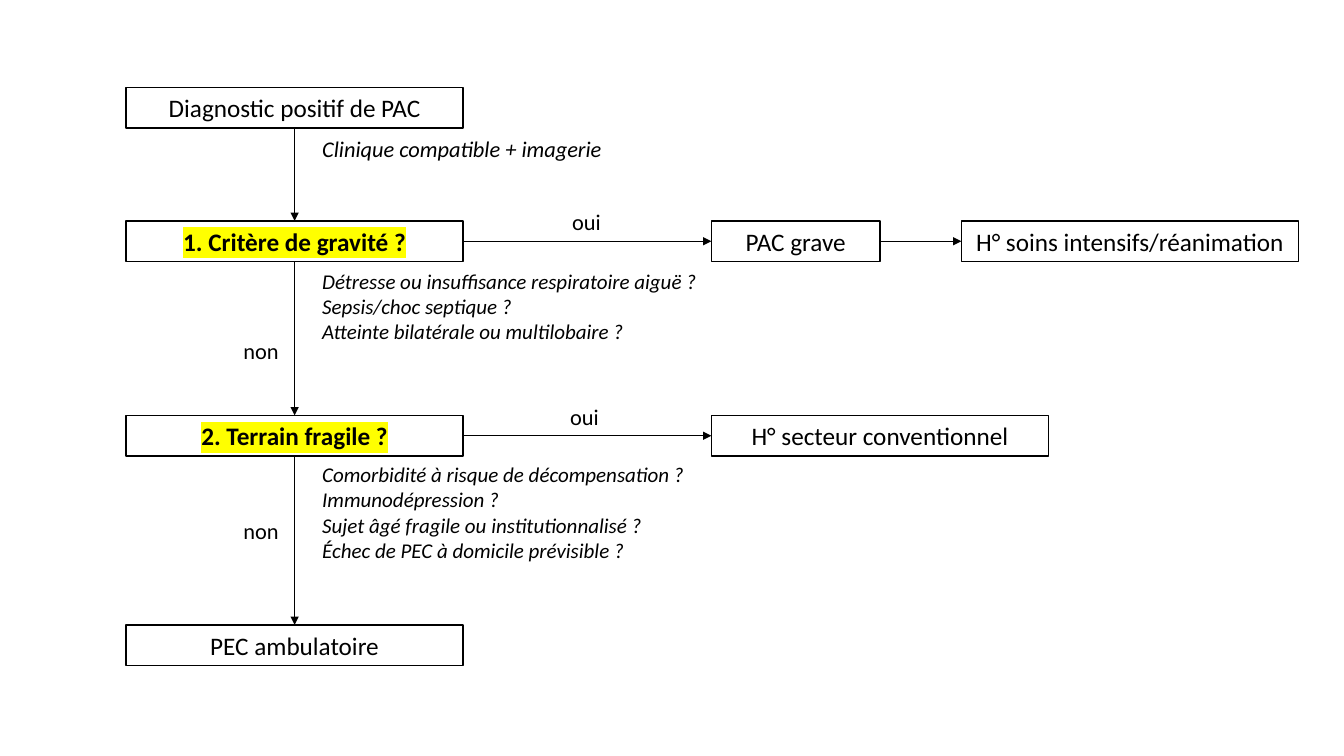
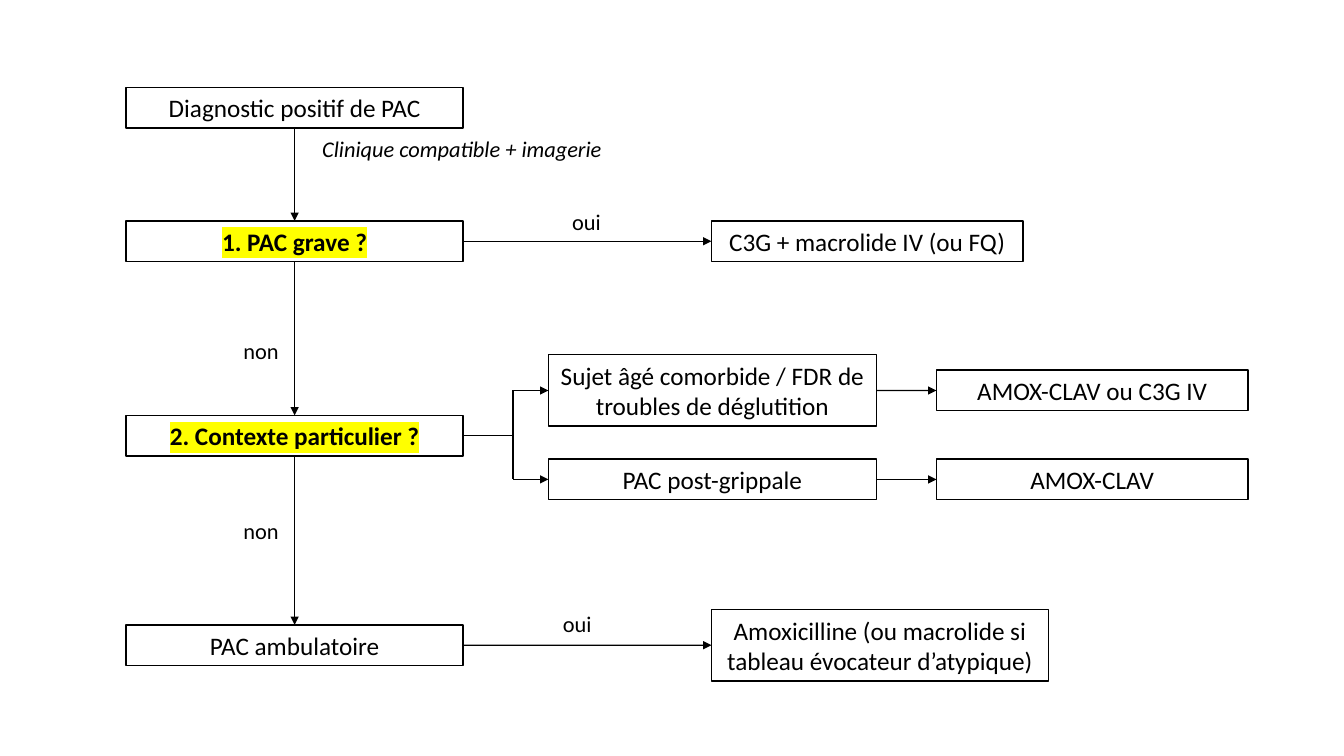
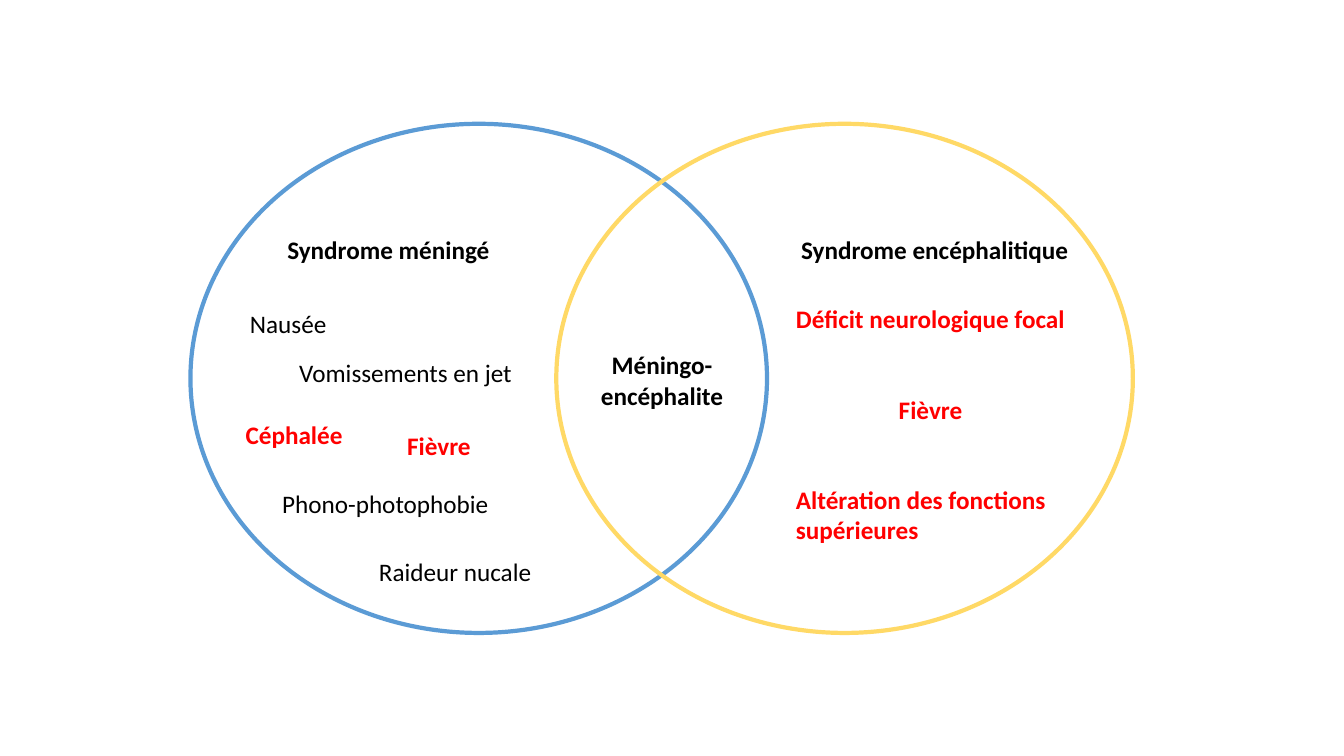
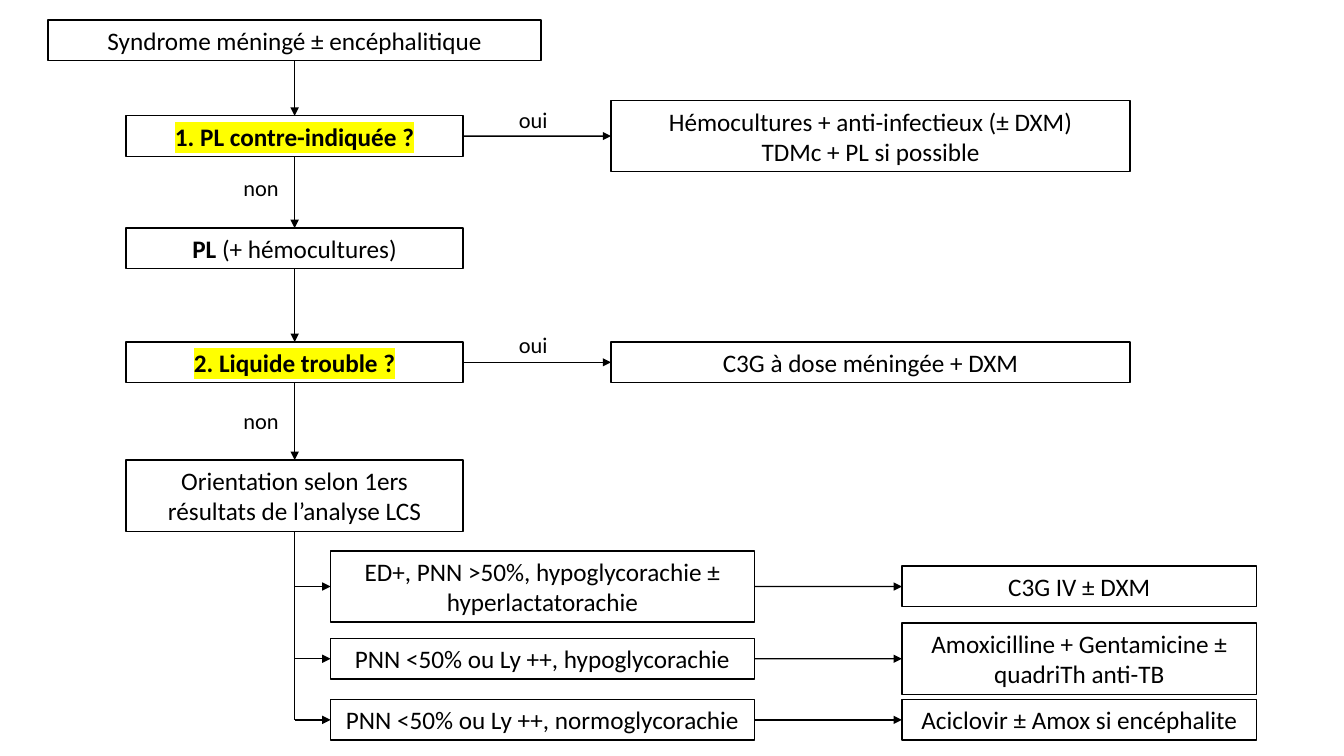
import dataclasses

import pptx
import pptx.dml.color
import pptx.enum.dml
import pptx.enum.shapes
import pptx.enum.text
import pptx.oxml
import pptx.oxml.ns
import pptx.util

Cm = pptx.util.Cm
Pt = pptx.util.Pt
Shape = pptx.enum.shapes.MSO_SHAPE
Align = pptx.enum.text.PP_ALIGN
Anchor = pptx.enum.text.MSO_ANCHOR
TOP, LEFT, BOTTOM, RIGHT = range(4)  # connection sites of a rectangle


def color(code):
    return pptx.dml.color.RGBColor.from_string(code)


@dataclasses.dataclass(frozen=True)
class Theme:
    font: str = "Calibri"
    ink: str = "000000"
    alert: str = "FF0000"
    mark: str = "FFFF00"
    blue: str = "5B9BD5"
    gold: str = "FFD966"
    body: int = 18
    label: int = 16
    note: int = 15
    thin: int = 1
    thick: int = 3


class Deck:
    """Holds the theme and the current slide."""

    def __init__(self, theme):
        self.theme = theme
        self.prs = pptx.Presentation()
        self.prs.slide_width, self.prs.slide_height = Cm(33.87), Cm(19.05)
        self.slide = None

    def page(self):
        self.slide = self.prs.slides.add_slide(self.prs.slide_layouts[6])

    # Text
    def tall(self, rows, size):
        return 0.25 + 0.043 * size * rows

    def run(self, para, text, size, tint=None, mark=False, **style):
        run = para.add_run()
        run.text = text
        run.font.color.rgb = color(tint or self.theme.ink)
        if mark:
            fill = run.font._element.find(pptx.oxml.ns.qn("a:solidFill"))
            fill.addnext(self.tag("highlight", f'<a:srgbClr val="{self.theme.mark}"/>'))
        values = {"name": self.theme.font, "size": Pt(size), **style}
        for key, value in values.items():
            setattr(run.font, key, value)

    def letter(self, shape, text, size, align, anchor, lead=None, **style):
        frame = shape.text_frame
        values = {"word_wrap": True, "vertical_anchor": anchor,
                  "auto_size": pptx.enum.text.MSO_AUTO_SIZE.SHAPE_TO_FIT_TEXT}
        for key, value in values.items():
            setattr(frame, key, value)
        for num, line in enumerate(text.split("\n")):
            para = frame.add_paragraph() if num else frame.paragraphs[0]
            para.alignment = align
            if lead:
                self.run(para, lead, size, bold=True)
            self.run(para, line, size, **style)

    def text(self, left, top, width, text, size=None, rows=1, align=Align.LEFT, **style):
        size = size or self.theme.body
        high = self.tall(rows, size)
        shape = self.slide.shapes.add_textbox(Cm(left), Cm(top), Cm(width), Cm(high))
        self.letter(shape, text, size, align, Anchor.TOP, **style)

    def label(self, mid, level, text):
        size = self.theme.label
        top = level - self.tall(1, size) / 2
        self.text(mid - 1.7, top, 3.4, text, size, align=Align.CENTER)

    def note(self, top, text, size=None):
        rows = text.count("\n") + 1
        self.text(7.87, top, 13.18, text, size or self.theme.note, rows, italic=True)

    # Shapes
    def form(self, kind, left, top, width, height, tint, weight):
        shape = self.slide.shapes.add_shape(
            kind, Cm(left), Cm(top), Cm(width), Cm(height))
        shape.shadow.inherit = False
        shape.fill.background()
        shape.line.color.rgb = color(tint)
        shape.line.width = Pt(weight)
        return shape

    def box(self, left, level, width, text, rows=1, **style):
        """A framed step, centred on the height called level."""
        theme = self.theme
        high = self.tall(rows, theme.body)
        shape = self.form(Shape.RECTANGLE, left, level - high / 2, width, high,
                          theme.ink, theme.thin)
        self.letter(shape, text, theme.body, Align.CENTER, Anchor.MIDDLE, **style)
        return shape

    def ring(self, left, tint):
        self.form(Shape.OVAL, left, 3.12, 14.53, 12.83, tint, self.theme.thick)

    # Lines
    def tag(self, name, inner=""):
        return pptx.oxml.parse_xml(
            f'<a:{name} {pptx.oxml.ns.nsdecls("a")}>{inner}</a:{name}>')

    def wire(self, start, end, arrow=True):
        line = self.slide.shapes.add_connector(
            pptx.enum.shapes.MSO_CONNECTOR.STRAIGHT, *start, *end)
        line.line.color.rgb = color(self.theme.ink)
        line.line.width = Pt(self.theme.thin)
        if arrow:
            tip = self.tag("tailEnd")
            tip.set("type", "triangle")
            line.line._get_or_add_ln().append(tip)
        line._element.spPr.append(self.tag("effectLst"))
        return line

    def link(self, first, last, out=RIGHT, into=LEFT):
        line = self.wire((0, 0), (0, 0))
        line.begin_connect(first, out)
        line.end_connect(last, into)

    def chain(self, boxes):
        for first, last in zip(boxes, boxes[1:]):
            self.link(first, last, BOTTOM, TOP)

    def fork(self, stem, boxes):
        """A vertical trunk at stem, with one arrow to each box."""
        levels = [box.top + box.height // 2 for box in boxes]
        self.wire((stem, levels[0]), (stem, levels[-1]), arrow=False)
        for box, level in zip(boxes, levels):
            self.wire((stem, level), (box.left, level))


# Columns shared by the flow charts
SPINE, STEP, SIDE = 3.18, 8.49, 17.93
AXIS, NO = SPINE + STEP / 2, 6.58
LEVELS = (2.72, 6.08, 10.98, 16.26)


def spine(deck, severe, context, last):
    """The four steps common to both pneumonia charts."""
    deck.page()
    names = ("Diagnostic positif de PAC", severe, context, last)
    steps = [deck.box(SPINE, level, STEP, name, bold=asks, mark=asks)
             for level, name, asks in zip(LEVELS, names, (False, True, True, False))]
    deck.chain(steps)
    deck.note(3.28, "Clinique compatible + imagerie", deck.theme.label)
    deck.label(14.78, 5.6, "oui")
    for level in (8.83, 13.37):
        deck.label(NO, level, "non")
    return steps


def orient(deck):
    steps = spine(deck, "1. Critère de gravité ?", "2. Terrain fragile ?",
                  "PEC ambulatoire")
    deck.note(6.63, "Détresse ou insuffisance respiratoire aiguë ?\n"
              "Sepsis/choc septique ?\nAtteinte bilatérale ou multilobaire ?")
    deck.note(11.51, "Comorbidité à risque de décompensation ?\nImmunodépression ?\n"
              "Sujet âgé fragile ou institutionnalisé ?\n"
              "Échec de PEC à domicile prévisible ?")
    severe = deck.box(SIDE, LEVELS[1], 4.25, "PAC grave")
    care = deck.box(24.23, LEVELS[1], STEP, "H° soins intensifs/réanimation")
    ward = deck.box(SIDE, LEVELS[2], STEP, "H° secteur conventionnel")
    for pair in ((steps[1], severe), (severe, care), (steps[2], ward)):
        deck.link(*pair)
    deck.label(14.73, 10.5, "oui")


def treat(deck):
    steps = spine(deck, "1. PAC grave ?", "2. Contexte particulier ?",
                  "PAC ambulatoire")
    drug = deck.box(SIDE, LEVELS[1], 7.85, "C3G + macrolide IV (ou FQ)")
    home = deck.box(SIDE, LEVELS[3], STEP, "Amoxicilline (ou macrolide si "
                    "tableau évocateur d’atypique)", rows=2)
    deck.link(steps[1], drug)
    deck.link(steps[3], home)
    deck.label(14.55, 15.71, "oui")
    # Special contexts and their drugs
    cases = []
    for level, case, rows, cure in (
            (9.84, "Sujet âgé comorbide / FDR de troubles de déglutition", 2,
             "AMOX-CLAV ou C3G IV"),
            (12.08, "PAC post-grippale", 1, "AMOX-CLAV")):
        cases.append(deck.box(13.82, level, 8.27, case, rows))
        deck.link(cases[-1], deck.box(23.6, level, 7.85, cure))
    stem = Cm(12.93)
    deck.fork(stem, cases)
    ask = steps[2]
    level = ask.top + ask.height // 2
    deck.wire((ask.left + ask.width, level), (stem, level), arrow=False)


def venn(deck):
    deck.page()
    theme = deck.theme
    deck.ring(4.8, theme.blue)
    deck.ring(14.02, theme.gold)
    # Headings
    deck.text(6.99, 5.77, 5.61, "Syndrome méningé", bold=True)
    deck.text(19.94, 5.77, 7.42, "Syndrome encéphalitique", bold=True)
    deck.text(14.88, 8.69, 3.61, "Méningo-encéphalite", rows=2,
              align=Align.CENTER, bold=True)
    # Signs
    for left, top, sign in (
            (6.05, 7.65, "Nausée"), (7.29, 8.89, "Vomissements en jet"),
            (6.86, 12.17, "Phono-photophobie"), (9.3, 13.89, "Raideur nucale")):
        deck.text(left, top, 5.89, sign)
    for left, top, width, sign, rows in (
            (5.94, 10.44, 5.89, "Céphalée", 1), (10.01, 10.72, 5.89, "Fièvre", 1),
            (22.4, 9.8, 5.89, "Fièvre", 1),
            (19.81, 7.52, 7.87, "Déficit neurologique focal", 1),
            (19.81, 12.07, 7.04, "Altération des fonctions supérieures", 2)):
        deck.text(left, top, width, sign, rows=rows, tint=theme.alert, bold=True)


def menin(deck):
    deck.page()
    # Main steps
    asks = {"bold": True, "mark": True}
    start = deck.box(AXIS - 6.21, 1.02, 12.42, "Syndrome méningé ± encéphalitique")
    risk = deck.box(SPINE, 3.43, STEP, "1. PL contre-indiquée ?", **asks)
    tap = deck.box(SPINE, 6.26, STEP, "(+ hémocultures)", lead="PL ")
    fluid = deck.box(SPINE, 9.13, STEP, "2. Liquide trouble ?", **asks)
    sort = deck.box(SPINE, 12.49, STEP,
                    "Orientation selon 1ers résultats de l’analyse LCS", rows=2)
    deck.chain([start, risk, tap, fluid, sort])
    for level in (4.74, 10.6):
        deck.label(NO, level, "non")
    # Answers
    for ask, level, high, text, rows in (
            (risk, 3.43, 3.01, "Hémocultures + anti-infectieux (± DXM)\n"
             "TDMc + PL si possible", 2),
            (fluid, 9.13, 8.7, "C3G à dose méningée + DXM", 1)):
        deck.link(ask, deck.box(15.4, level, 13.08, text, rows))
        deck.label(13.44, high, "oui")
    # Results and their drugs
    finds = []
    for level, find, rows, cure, lines in (
            (14.78, "ED+, PNN >50%, hypoglycorachie ± hyperlactatorachie", 2,
             "C3G IV ± DXM", 1),
            (16.6, "PNN <50% ou Ly ++, hypoglycorachie", 1,
             "Amoxicilline + Gentamicine ± quadriTh anti-TB", 2),
            (18.14, "PNN <50% ou Ly ++, normoglycorachie", 1,
             "Aciclovir ± Amox si encéphalite", 1)):
        finds.append(deck.box(8.33, level, 10.68, find, rows))
        deck.link(finds[-1], deck.box(22.73, level, 8.94, cure, lines))
    stem = sort.left + sort.width // 2
    deck.fork(stem, finds)
    deck.wire((stem, sort.top + sort.height),
              (stem, finds[0].top + finds[0].height // 2), arrow=False)


def main():
    deck = Deck(Theme())
    for draw in (orient, treat, venn, menin):
        draw(deck)
    deck.prs.save("out.pptx")


if __name__ == "__main__":
    main()
